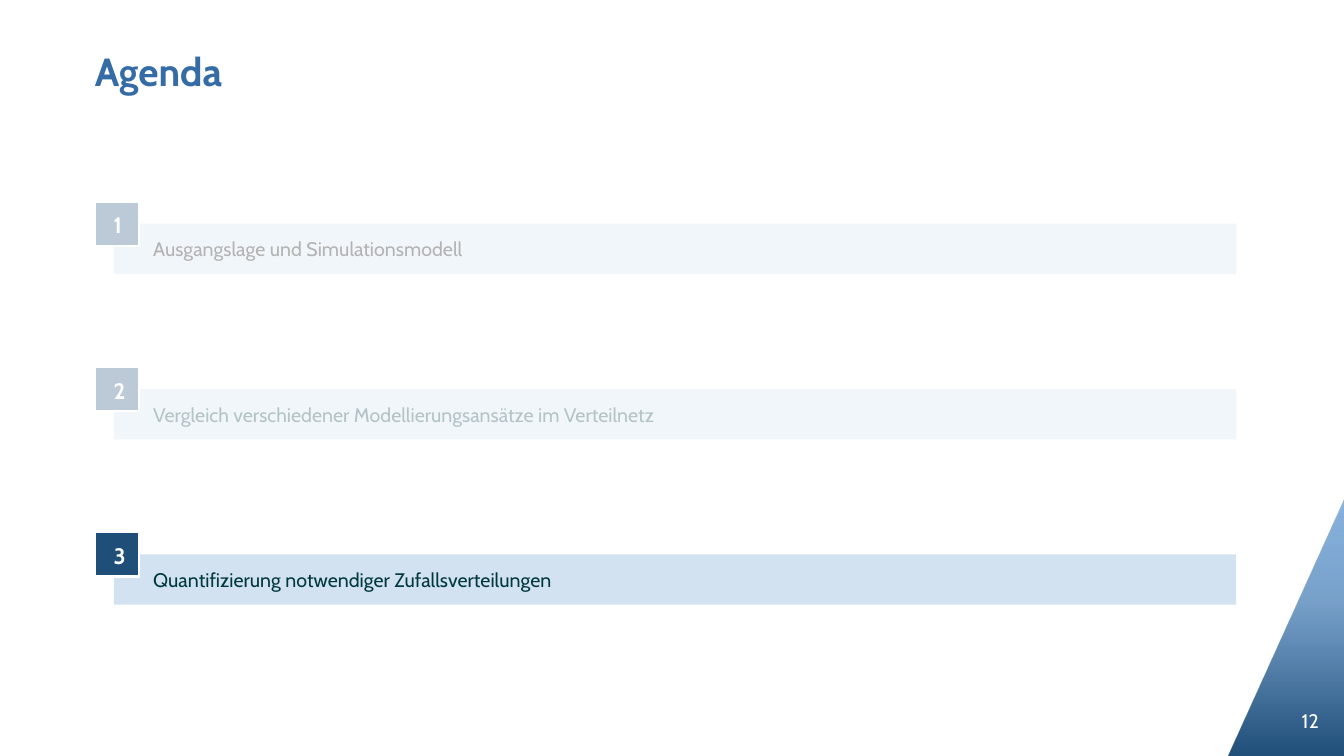
"""Build the agenda slide with its third chapter highlighted."""
from dataclasses import dataclass

from lxml import etree
from pptx import Presentation
from pptx import util as u
from pptx.dml.color import RGBColor
from pptx.enum import shapes, text
from pptx.oxml import parse_xml
from pptx.oxml.ns import nsdecls, qn


@dataclass(frozen=True)
class Theme:
    font: str = "Cabin"
    title: str = "356CA5"
    navy: str = "1F4E79"
    bar: str = "D3E2F1"
    white: str = "FFFFFF"
    black: str = "000000"
    petrol: str = "003840"
    gradient: tuple = ((0, "1F4E79", 100), (60, "6A97C4", 90), (100, "8AB5E1", 100))
    title_size: int = 28
    number_size: int = 16
    body_size: int = 14


@dataclass(frozen=True)
class Box:
    left: float
    top: float
    width: float
    height: float

    def lengths(self):
        return [u.Inches(v) for v in (self.left, self.top, self.width, self.height)]


@dataclass(frozen=True)
class Chapter:
    label: str
    color: str


THEME = Theme()
CHAPTERS = (
    Chapter("Ausgangslage und Simulationsmodell", THEME.black),
    Chapter("Vergleich verschiedener Modellierungsansätze im Verteilnetz", THEME.petrol),
    Chapter("Quantifizierung notwendiger Zufallsverteilungen", THEME.petrol),
)
CURRENT_CHAPTER = 2
FIRST_TOP, CHAPTER_STEP = 2.0, 1.64
VEIL_TOP, VEIL_STEP = 1.75, 1.67


def write(shape, words: str, size: int, color: str, align, bold: bool = False):
    """Set the single paragraph of a shape and return it."""
    paragraph = shape.text_frame.paragraphs[0]
    paragraph.text = words
    paragraph.alignment = align
    font = paragraph.font
    font.name, font.size, font.bold = THEME.font, u.Pt(size), bold
    font.color.rgb = RGBColor.from_string(color)
    return paragraph


def add_filled(parent, kind, box: Box, color: str):
    """Add a flat preset shape without outline."""
    shape = parent.add_shape(kind, *box.lengths())
    shape.shadow.inherit = False
    shape.fill.solid()
    shape.fill.fore_color.rgb = RGBColor.from_string(color)
    shape.line.fill.background()
    return shape


def add_corner(slide) -> None:
    """Add the gradient triangle and the page number on it."""
    triangle = add_filled(slide.shapes, shapes.MSO_SHAPE.RIGHT_TRIANGLE,
                          Box(12.18, 4.94, 1.15, 2.57), THEME.navy)
    properties = triangle.element.spPr
    properties.xfrm.set("flipH", "1")
    stops = "".join(
        f'<a:gs pos="{position * 1000}"><a:srgbClr val="{color}">'
        f'<a:alpha val="{alpha * 1000}"/></a:srgbClr></a:gs>'
        for position, color, alpha in THEME.gradient)
    gradient = parse_xml(f'<a:gradFill {nsdecls("a")} rotWithShape="1"><a:gsLst>{stops}</a:gsLst>'
                         '<a:lin ang="16200000" scaled="0"/></a:gradFill>')
    properties.replace(properties.find(qn("a:solidFill")), gradient)

    page = slide.shapes.add_textbox(*Box(12.46, 6.95, 0.72, 0.4).lengths())
    page.text_frame.word_wrap = True
    page.text_frame.vertical_anchor = text.MSO_ANCHOR.MIDDLE
    write(page, "12", THEME.body_size, THEME.white, text.PP_ALIGN.RIGHT)


def add_title(slide) -> None:
    """Place and format the title placeholder."""
    title = slide.shapes.title
    title.left, title.top, title.width, title.height = Box(0.84, 0.01, 11.43, 1.45).lengths()
    title.text_frame.vertical_anchor = text.MSO_ANCHOR.MIDDLE
    paragraph = write(title, "Agenda", THEME.title_size, THEME.title, text.PP_ALIGN.LEFT, True)
    paragraph.line_spacing = 0.9


def add_chapter(slide, index: int, chapter: Chapter) -> None:
    """Add one grouped agenda row: bar, square and number."""
    top = FIRST_TOP + index * CHAPTER_STEP
    row = slide.shapes.add_group_shape().shapes
    rectangle = shapes.MSO_SHAPE.RECTANGLE

    bar = add_filled(row, rectangle, Box(1.13, top + 0.22, 11.13, 0.5), THEME.bar)
    bar.text_frame.margin_left = u.Inches(0.39)
    bar.text_frame.word_wrap = True
    bar.text_frame.vertical_anchor = text.MSO_ANCHOR.MIDDLE
    write(bar, chapter.label, THEME.body_size, chapter.color, text.PP_ALIGN.LEFT)

    square = add_filled(row, rectangle, Box(0.94, top, 0.44, 0.44), THEME.navy)
    square.line.color.rgb = RGBColor.from_string(THEME.white)
    square.line.width = u.Pt(1.5)

    number = row.add_textbox(*Box(1.03, top + 0.05, 0.27, 0.37).lengths())
    number.text_frame.word_wrap = False
    write(number, str(index + 1), THEME.number_size, THEME.white, text.PP_ALIGN.CENTER, True)


def add_veil(slide, index: int) -> None:
    """Fade an inactive row with a translucent white rectangle."""
    veil = add_filled(slide.shapes, shapes.MSO_SHAPE.RECTANGLE,
                      Box(0.79, VEIL_TOP + index * VEIL_STEP, 11.76, 1.37), THEME.white)
    color = veil.element.spPr.find(qn("a:solidFill")).find(qn("a:srgbClr"))
    etree.SubElement(color, qn("a:alpha")).set("val", "70000")


def main() -> None:
    """Assemble and save the presentation."""
    presentation = Presentation()
    presentation.slide_width, presentation.slide_height = u.Inches(13.33), u.Inches(7.5)
    slide = presentation.slides.add_slide(presentation.slide_layouts[5])
    add_corner(slide)
    add_title(slide)
    for index, chapter in enumerate(CHAPTERS):
        add_chapter(slide, index, chapter)
    for index in range(len(CHAPTERS)):
        if index != CURRENT_CHAPTER:
            add_veil(slide, index)
    presentation.save("out.pptx")


if __name__ == "__main__":
    main()
